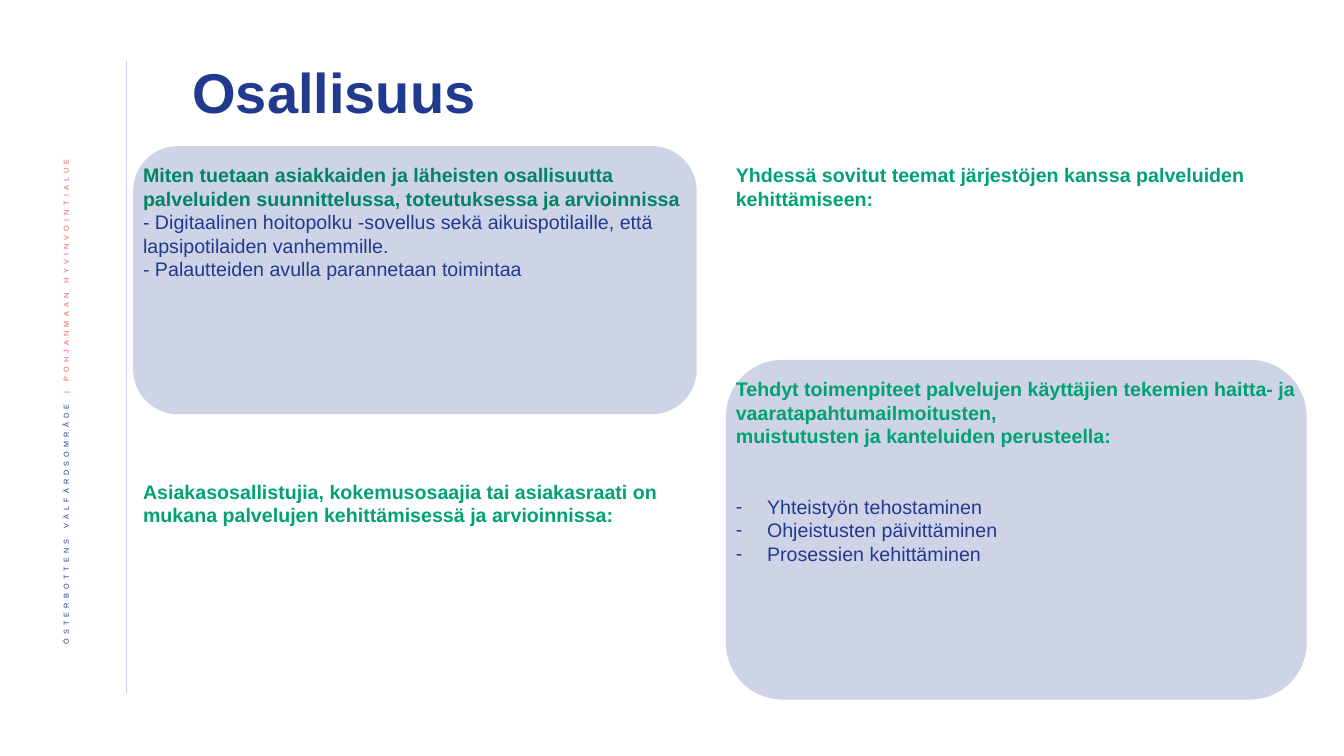
import pptx
import pptx.dml.color
import pptx.enum.shapes
import pptx.enum.text
import pptx.oxml.ns
import pptx.util
from lxml import etree
from pptx.util import Inches

NAVY, GREEN, DARK_GREEN, CORAL, PALE_BLUE = "213A8F", "00A174", "008464", "EB5C5F", "C9D2F2"
LEFT, RIGHT = 1.32, 7.2
LEFT_WIDTH, RIGHT_WIDTH = 5.59, 5.76
PANEL_TEXT_OFFSET = 0.12


def color(value):
    return pptx.dml.color.RGBColor.from_string(value)


def add_element(parent, tag, **attributes):
    return etree.SubElement(parent, pptx.oxml.ns.qn(tag), attributes)


class SlideBuilder:
    """Draws styled elements on the current slide."""

    font_name = "Arial"
    body_size = 14

    def __init__(self, slide):
        self.slide = slide

    def style(self, font, size, value, bold=False):
        font.name = self.font_name
        font.size = pptx.util.Pt(size)
        font.bold = bold
        font.color.rgb = color(value)

    def text_box(self, left, top, width, height, anchor=pptx.enum.text.MSO_ANCHOR.TOP):
        shape = self.slide.shapes.add_textbox(
            Inches(left), Inches(top), Inches(width), Inches(height))
        frame = shape.text_frame
        frame.word_wrap = True
        frame.vertical_anchor = anchor
        return frame

    def title(self, text):
        frame = self.text_box(1.81, 0.45, 9.98, 0.99, pptx.enum.text.MSO_ANCHOR.MIDDLE)
        paragraph = frame.paragraphs[0]
        paragraph.text = text
        paragraph.line_spacing = 0.9
        self.style(paragraph.font, 40, NAVY, True)

    def side_label(self, parts):
        frame = self.text_box(0.42, 1.42, 0.52, 5.73, pptx.enum.text.MSO_ANCHOR.MIDDLE)
        frame._txBody.bodyPr.set("vert", "vert270")
        paragraph = frame.paragraphs[0]
        paragraph.alignment = pptx.enum.text.PP_ALIGN.RIGHT
        paragraph.line_spacing = 0.9
        for text, value in parts:
            run = paragraph.add_run()
            run.text = text
            self.style(run.font, 9, value)
            properties = run._r.get_or_add_rPr()
            properties.set("baseline", "30000")
            properties.set("spc", "300")

    def rule(self, left, top, bottom):
        line = self.slide.shapes.add_connector(
            pptx.enum.shapes.MSO_CONNECTOR.STRAIGHT,
            Inches(left), Inches(top), Inches(left), Inches(bottom))
        line.line.color.rgb = color(PALE_BLUE)
        line.line.width = pptx.util.Pt(0.5)
        add_element(line._element.spPr, "a:effectLst")

    def panel(self, left, top, width, height):
        shape = self.slide.shapes.add_shape(
            pptx.enum.shapes.MSO_SHAPE.ROUNDED_RECTANGLE,
            Inches(left), Inches(top), Inches(width), Inches(height))
        shape.shadow.inherit = False
        shape.fill.solid()
        shape.fill.fore_color.rgb = color(NAVY)
        shape.line.fill.background()
        fill_color = shape._element.spPr.find(".//" + pptx.oxml.ns.qn("a:srgbClr"))
        add_element(fill_color, "a:alpha", val="22000")

    def bullet(self, paragraph):
        properties = paragraph._p.get_or_add_pPr()
        indent = Inches(0.31)
        properties.set("marL", str(indent))
        properties.set("indent", str(-indent))
        add_element(properties, "a:buFont", typeface=self.font_name)
        add_element(properties, "a:buChar", char="-")

    def topic(self, left, top, width, height, headings, items=(),
              heading_color=GREEN, bulleted=False, gap=0):
        frame = self.text_box(left, top, width, height)
        for index, text in enumerate([*headings, *items]):
            paragraph = frame.add_paragraph() if index else frame.paragraphs[0]
            is_heading = index < len(headings)
            paragraph.text = text
            if index == len(headings) and gap:
                paragraph.space_before = pptx.util.Pt(gap)
            if bulleted and not is_heading:
                self.bullet(paragraph)
            self.style(paragraph.font, self.body_size,
                       heading_color if is_heading else NAVY, is_heading)


def main():
    presentation = pptx.Presentation()
    presentation.slide_width = Inches(13.33)
    presentation.slide_height = Inches(7.5)
    builder = SlideBuilder(presentation.slides.add_slide(presentation.slide_layouts[6]))

    builder.rule(1.25, 0.61, 6.88)
    builder.side_label([("ÖSTERBOTTENS VÄLFÄRDSOMRÅDE ", NAVY),
                        ("| POHJANMAAN HYVINVOINTIALUE ", CORAL)])
    builder.title("Osallisuus")

    support_top, actions_top = 1.45, 3.57
    builder.panel(LEFT, support_top, LEFT_WIDTH, 2.66)
    builder.topic(
        LEFT, support_top + PANEL_TEXT_OFFSET, LEFT_WIDTH, 1.28,
        ["Miten tuetaan asiakkaiden ja läheisten osallisuutta palveluiden "
         "suunnittelussa, toteutuksessa ja arvioinnissa"],
        ["- Digitaalinen hoitopolku -sovellus sekä aikuispotilaille, "
         "että lapsipotilaiden vanhemmille.",
         "- Palautteiden avulla parannetaan toimintaa"],
        heading_color=DARK_GREEN)
    builder.topic(
        RIGHT, support_top + PANEL_TEXT_OFFSET, RIGHT_WIDTH, 0.57,
        ["Yhdessä sovitut teemat järjestöjen kanssa palveluiden kehittämiseen:"])
    builder.topic(
        LEFT, 4.71, LEFT_WIDTH, 0.81,
        ["Asiakasosallistujia, kokemusosaajia tai asiakasraati on mukana "
         "palvelujen kehittämisessä ja arvioinnissa:"])
    builder.panel(RIGHT, actions_top, RIGHT_WIDTH, 3.37)
    builder.topic(
        RIGHT, actions_top + PANEL_TEXT_OFFSET, RIGHT_WIDTH, 2.69,
        ["Tehdyt toimenpiteet palvelujen käyttäjien tekemien haitta- ja "
         "vaaratapahtumailmoitusten,",
         "muistutusten ja kanteluiden perusteella:"],
        ["Yhteistyön tehostaminen", "Ohjeistusten päivittäminen", "Prosessien kehittäminen"],
        bulleted=True, gap=33.5)

    presentation.save("out.pptx")


if __name__ == "__main__":
    main()
